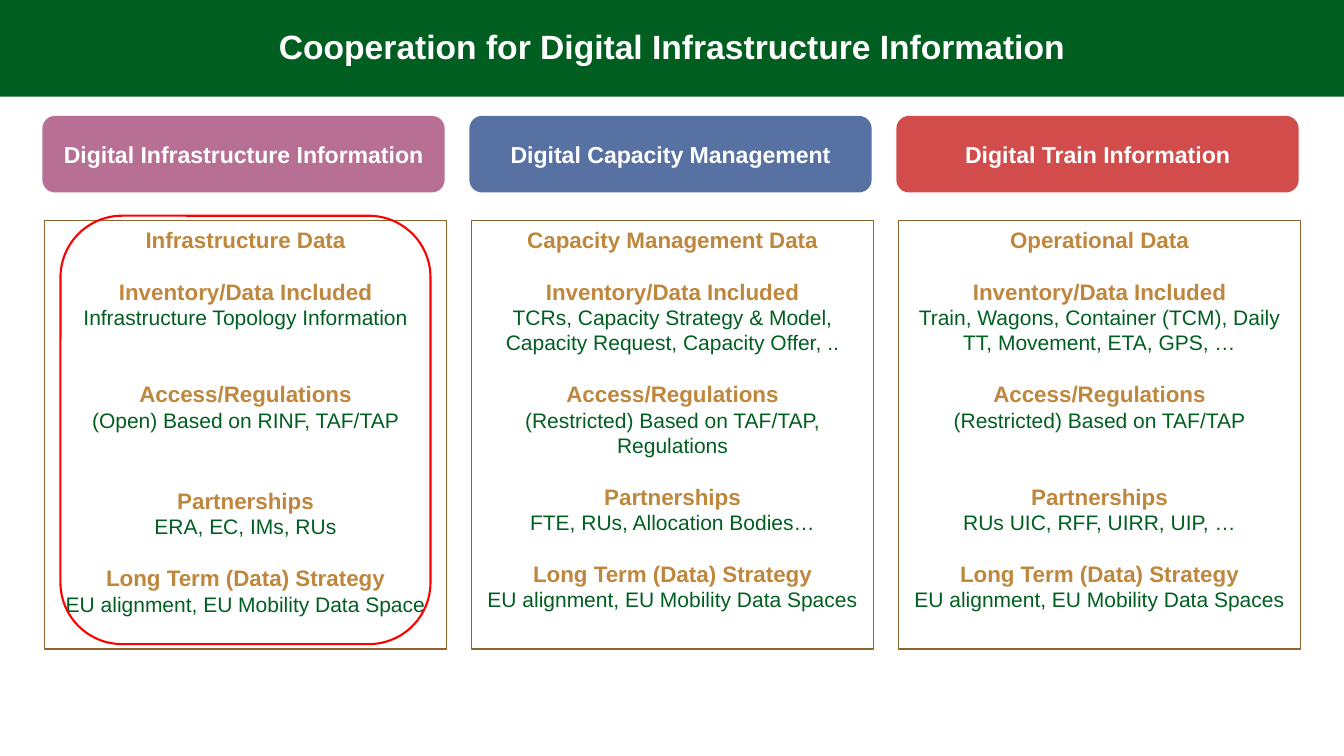
from lxml import etree
from pptx import Presentation
from pptx.dml.color import RGBColor
from pptx.enum.shapes import MSO_SHAPE
from pptx.enum.text import MSO_ANCHOR, PP_ALIGN
from pptx.oxml.ns import qn
from pptx.util import Inches, Pt

RECT, ROUNDED = MSO_SHAPE.RECTANGLE, MSO_SHAPE.ROUNDED_RECTANGLE
CENTER, MIDDLE, TOP = PP_ALIGN.CENTER, MSO_ANCHOR.MIDDLE, MSO_ANCHOR.TOP
GREEN, GOLD, BROWN, WHITE, RED = "005F20", "BF873D", "8D642D", "FFFFFF", "FF0000"
LEFT, PITCH, WIDTH = 0.42, 4.235, 3.99

# Columns: header, header colour, data title, (space before, heading, text)
COLUMNS = [
    ("Digital Infrastructure Information", "993366", "Infrastructure Data", [
        (18, "Inventory/Data Included", "Infrastructure Topology Information"),
        (36, "Access/Regulations", "(Open) Based on RINF, TAF/TAP"),
        (39, "Partnerships", "ERA, EC, IMs, RUs"),
        (18, "Long Term (Data) Strategy", "EU alignment, EU Mobility Data Space")]),
    ("Digital Capacity Management", "10367D", "Capacity Management Data", [
        (18, "Inventory/Data Included",
         "TCRs, Capacity Strategy & Model, Capacity Request, Capacity Offer, .."),
        (18, "Access/Regulations", "(Restricted) Based on TAF/TAP, Regulations"),
        (18, "Partnerships", "FTE, RUs, Allocation Bodies…"),
        (18, "Long Term (Data) Strategy", "EU alignment, EU Mobility Data Spaces")]),
    ("Digital Train Information", "C00000", "Operational Data", [
        (18, "Inventory/Data Included",
         "Train, Wagons, Container (TCM), Daily TT, Movement, ETA, GPS, …"),
        (18, "Access/Regulations", "(Restricted) Based on TAF/TAP"),
        (36, "Partnerships", "RUs UIC, RFF, UIRR, UIP, …"),
        (18, "Long Term (Data) Strategy", "EU alignment, EU Mobility Data Spaces")]),
]


def rgb(value):
    return RGBColor.from_string(value)


def add_line(p, text, size, color, bold=True):
    p.alignment = CENTER
    r = p.add_run()
    r.text = text
    r.font.name, r.font.size, r.font.bold = "Arial", Pt(size), bold
    r.font.color.rgb = rgb(color)


prs = Presentation()
prs.slide_width, prs.slide_height = Inches(13.33), Inches(7.5)
s = prs.slides.add_slide(prs.slide_layouts[5])

# Title band
title = s.shapes.title
title.left, title.top = Inches(0), Inches(0)
title.width, title.height = prs.slide_width, Inches(0.96)
title.fill.solid()
title.fill.fore_color.rgb = rgb(GREEN)
tf = title.text_frame
tf.vertical_anchor = MIDDLE
tf.paragraphs[0].line_spacing = 0.9
add_line(tf.paragraphs[0], "Cooperation for Digital Infrastructure Information", 24, WHITE)

for i, (header, color, data_title, sections) in enumerate(COLUMNS):
    x = LEFT + i * PITCH

    # Framed details
    sp = s.shapes.add_shape(RECT, Inches(x + 0.02), Inches(2.19), Inches(WIDTH), Inches(4.25))
    sp.shadow.inherit = False
    sp.fill.background()
    sp.line.color.rgb = rgb(BROWN)
    sp.line.width = Pt(1)
    tf = sp.text_frame
    tf.word_wrap, tf.vertical_anchor = True, TOP
    add_line(tf.paragraphs[0], data_title, 16, GOLD)
    for gap, heading, text in sections:
        p = tf.add_paragraph()
        p.space_before = Pt(gap)
        add_line(p, heading, 16, GOLD)
        add_line(tf.add_paragraph(), text, 15, GREEN, bold=False)

    # Column header, 70 % opaque
    sp = s.shapes.add_shape(ROUNDED, Inches(x), Inches(1.15), Inches(WIDTH), Inches(0.76))
    sp.shadow.inherit = False
    sp.fill.solid()
    sp.fill.fore_color.rgb = rgb(color)
    fill_color = sp.fill._xPr.find(qn("a:solidFill"))[0]
    etree.SubElement(fill_color, qn("a:alpha"), val="70000")
    sp.line.fill.background()
    tf = sp.text_frame
    tf.word_wrap, tf.vertical_anchor = True, MIDDLE
    add_line(tf.paragraphs[0], header, 16.5, WHITE)

# Red highlight around the first column
sp = s.shapes.add_shape(ROUNDED, Inches(0.6), Inches(2.14), Inches(3.67), Inches(4.25))
sp.shadow.inherit = False
sp.fill.background()
sp.line.color.rgb = rgb(RED)
sp.line.width = Pt(1.5)

prs.save("out.pptx")
